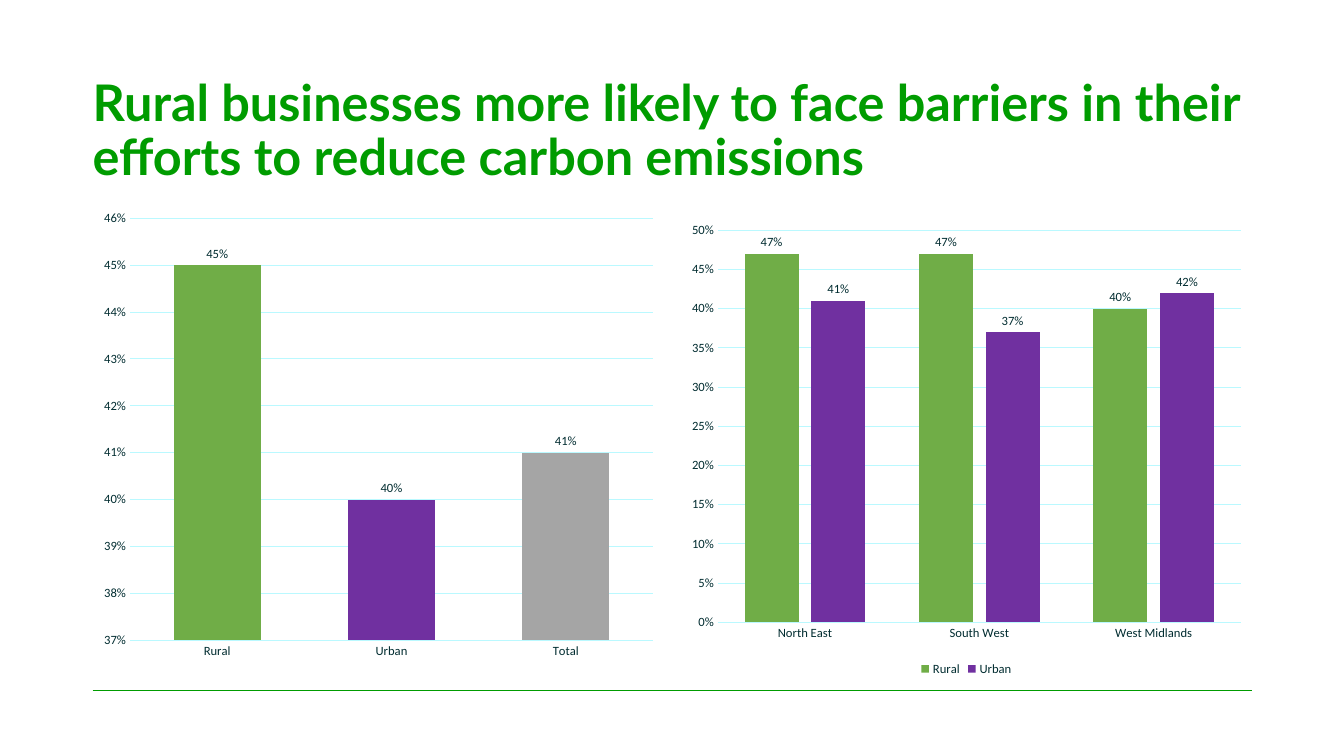
from lxml.etree import SubElement
from pptx import Presentation
from pptx.chart.data import CategoryChartData
from pptx.dml.color import RGBColor
from pptx.enum.chart import (XL_CHART_TYPE, XL_LABEL_POSITION,
                             XL_LEGEND_POSITION, XL_TICK_MARK)
from pptx.enum.text import MSO_ANCHOR
from pptx.oxml.ns import qn
from pptx.util import Inches, Pt

COLORS = {"title": "009C00", "text": "002C30", "grid": "BAF9FF",
          "rural": "70AD47", "urban": "7030A0", "total": "A5A5A5"}
LEFT, WIDE = 0.92, 11.5
CHART_W, CHART_H = 5.67, 4.63


def color(name):
    return RGBColor.from_string(COLORS[name])


def assign(target, **values):
    for name, value in values.items():
        setattr(target, name, value)


def style(font, name, size, hue, bold=False):
    assign(font, name=name, size=Pt(size), bold=bold)
    font.color.rgb = color(hue)


def paint(fill, hue):
    fill.solid()
    fill.fore_color.rgb = color(hue)


def draw_line(line, hue, width):
    line.color.rgb = color(hue)
    line.width = Pt(width)


def add_title(slide, text, box):
    frame = slide.shapes.add_textbox(*map(Inches, box)).text_frame
    assign(frame, word_wrap=True, vertical_anchor=MSO_ANCHOR.BOTTOM,
           margin_left=0, margin_right=0, margin_top=0, margin_bottom=0)
    line = frame.paragraphs[0]
    line.text = text
    line.line_spacing = 0.9
    style(line.runs[0].font, "Lato", 36, "title", True)


def add_rule(slide, left, top, width):
    rule = slide.shapes.add_connector(
        1, *map(Inches, (left, top, left + width, top)))
    draw_line(rule.line, "title", 1)
    SubElement(rule._element.spPr, qn("a:effectLst"))


def add_bars(slide, box, cats, series, hues, scale, legend=False):
    """Draw columns; hues has one list of bar colours per series."""
    data = CategoryChartData(number_format="0%")
    data.categories = cats
    for name, values in series.items():
        data.add_series(name, values)
    chart = slide.shapes.add_chart(
        XL_CHART_TYPE.COLUMN_CLUSTERED, *map(Inches, box), data).chart
    assign(chart, has_title=False, has_legend=legend)
    style(chart.font, "Calibri", 9, "text")
    if legend:
        assign(chart.legend, position=XL_LEGEND_POSITION.BOTTOM,
               include_in_layout=False)
        style(chart.legend.font, "Calibri", 9, "text")

    for axis in (chart.category_axis, chart.value_axis):
        assign(axis, major_tick_mark=XL_TICK_MARK.NONE,
               minor_tick_mark=XL_TICK_MARK.NONE)
        style(axis.tick_labels.font, "Calibri", 9, "text")
    draw_line(chart.category_axis.format.line, "grid", 0.75)
    axis = chart.value_axis
    low, high, step = scale
    assign(axis, minimum_scale=low, maximum_scale=high, major_unit=step,
           has_major_gridlines=True)
    axis.format.line.fill.background()
    draw_line(axis.major_gridlines.format.line, "grid", 0.75)
    assign(axis.tick_labels, number_format="0%",
           number_format_is_linked=False)

    plot = chart.plots[0]
    assign(plot, gap_width=100, overlap=-24, vary_by_categories=False)
    for bars, tones in zip(plot.series, hues):
        bars.invert_if_negative = False
        paint(bars.format.fill, tones[0])
        if len(tones) > 1:
            for i, tone in enumerate(tones):
                paint(bars.points[i].format.fill, tone)
        labels = bars.data_labels
        assign(labels, show_value=True, number_format="0%",
               number_format_is_linked=False,
               position=XL_LABEL_POSITION.OUTSIDE_END)
        style(labels.font, "Calibri", 9, "text")


def main():
    deck = Presentation()
    assign(deck, slide_width=Inches(13.33), slide_height=Inches(7.5))
    slide = deck.slides.add_slide(deck.slide_layouts[6])
    add_rule(slide, LEFT, 6.85, WIDE)
    add_title(slide, "Rural businesses more likely to face barriers in their "
              "efforts to reduce carbon emissions", (LEFT, 0.72, WIDE, 1.13))
    add_bars(slide, (LEFT, 2, CHART_W, CHART_H),
             ["Rural", "Urban", "Total"], {"Series 1": (0.45, 0.4, 0.41)},
             [["rural", "urban", "total"]], (0.37, 0.46, 0.01))
    add_bars(slide, (LEFT + WIDE - CHART_W, 2.12, CHART_W, CHART_H),
             ["North East", "South West", "West Midlands"],
             {"Rural": (0.47, 0.47, 0.4), "Urban": (0.41, 0.37, 0.42)},
             [["rural"], ["urban"]], (0, 0.5, 0.05), legend=True)
    deck.save("out.pptx")


if __name__ == "__main__":
    main()
